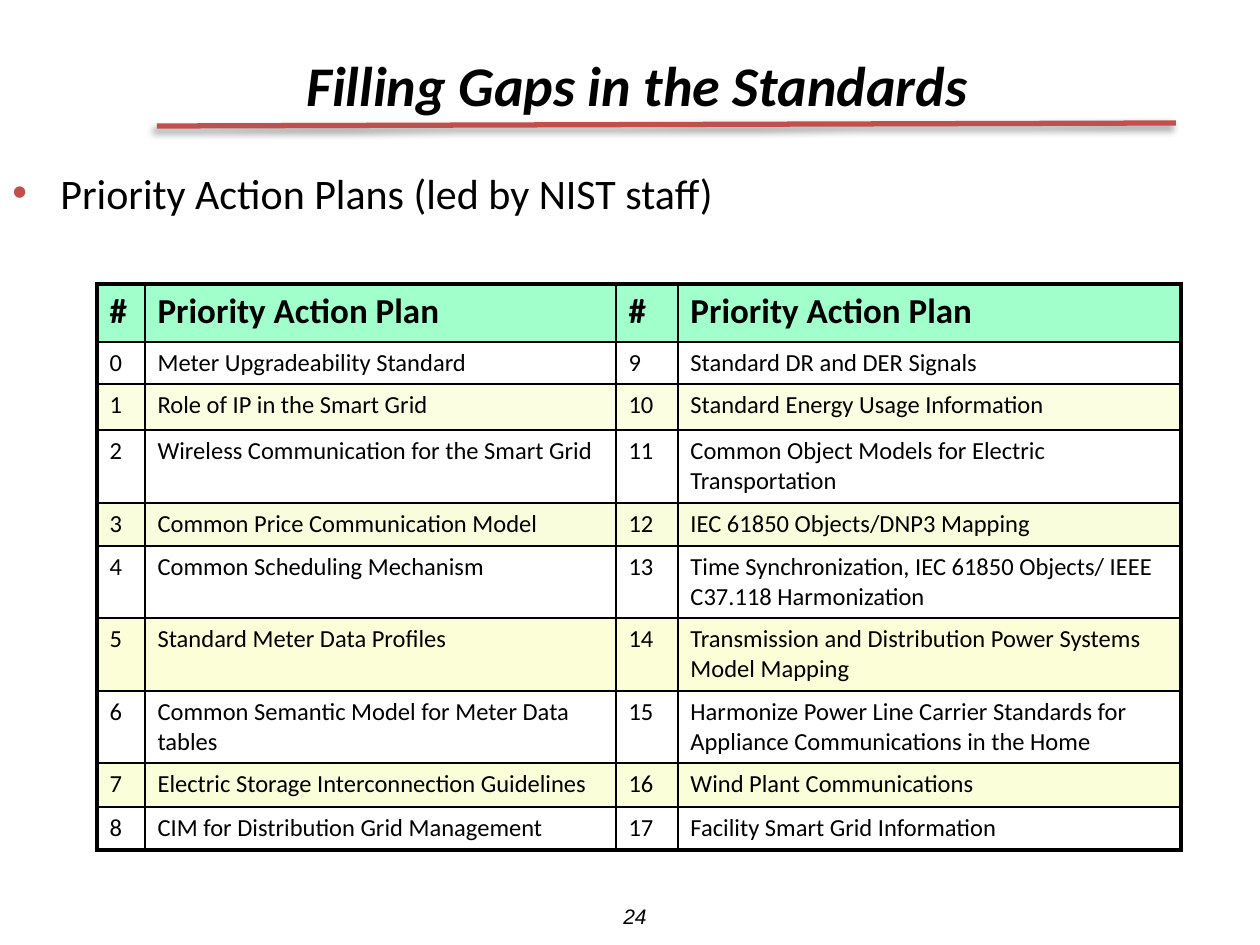
from lxml.etree import SubElement as Sub
from pptx import Presentation
from pptx.dml.color import RGBColor as Rgb
from pptx.enum.shapes import MSO_CONNECTOR as Conn
from pptx.enum.text import MSO_ANCHOR as Anchor, PP_ALIGN as Align
from pptx.oxml.ns import qn
from pptx.util import Pt

SCALE = 914400 / 126
BLACK, RED, MINT = "000000", "C0504D", "43FF98"
THIN, THICK = 1, 2.25

COLS = [48, 471, 62, 503]
HEAD = ["#", "Priority Action Plan"] * 2
HEAD_TALL = 58
# Row height, fill, left plan, right plan
PLANS = [
    (42, None, "Meter Upgradeability Standard", "Standard DR and DER Signals"),
    (46, "FAFEC6", "Role of IP in the Smart Grid", "Standard Energy Usage Information"),
    (73, None, "Wireless Communication for the Smart Grid",
     "Common Object Models for Electric Transportation"),
    (43, "F7FDBB", "Common Price Communication Model", "IEC 61850 Objects/DNP3 Mapping"),
    (72, None, "Common Scheduling Mechanism",
     "Time Synchronization, IEC 61850 Objects/ IEEE C37.118 Harmonization"),
    (73, "F8FEB0", "Standard Meter Data Profiles",
     "Transmission and Distribution Power Systems Model Mapping"),
    (72, None, "Common Semantic Model for Meter Data tables",
     "Harmonize Power Line Carrier Standards for Appliance Communications in the Home"),
    (44, "F7FEB4", "Electric Storage Interconnection Guidelines",
     "Wind Plant Communications"),
    (43, None, "CIM for Distribution Grid Management", "Facility Smart Grid Information"),
]


def px(n):
    return round(n * SCALE)


def color(code):
    return Rgb.from_string(code)


def style(para, size, **more):
    form = {"name": "Calibri", "size": Pt(size), "bold": False, "italic": False, **more}
    for key, val in form.items():
        setattr(para.font, key, val)
    para.font.color.rgb = color(BLACK)


def add_text(slide, box, text, size, align=Align.LEFT, anchor=Anchor.TOP, bullet=None, **more):
    frame = slide.shapes.add_textbox(*map(px, box)).text_frame
    frame.word_wrap = True
    frame.vertical_anchor = anchor
    para = frame.paragraphs[0]
    para.text = text
    para.alignment = align
    if bullet:
        add_bullet(para, bullet, 48)
    style(para, size, **more)


def add_bullet(para, code, indent):
    props = para._p.get_or_add_pPr()
    props.set("marL", str(px(indent)))
    props.set("indent", str(-px(indent)))
    Sub(Sub(props, qn("a:buClr")), qn("a:srgbClr"), val=code)
    Sub(props, qn("a:buFont"), typeface="Arial")
    Sub(props, qn("a:buChar"), char="•")


def add_rule(slide, ends, code, width):
    rule = slide.shapes.add_connector(Conn.STRAIGHT, *map(px, ends))
    rule.line.color.rgb = color(code)
    rule.line.width = Pt(width)
    # Soft shadow to the lower left
    glow = Sub(rule._element.spPr, qn("a:effectLst"))
    cast = Sub(glow, qn("a:outerShdw"), blurRad=str(Pt(4)), dist=str(Pt(3)),
               dir="8100000", algn="tr", rotWithShape="0")
    Sub(Sub(cast, qn("a:srgbClr"), val=BLACK), qn("a:alpha"), val="40000")


def add_edge(cell, side, width):
    edge = Sub(cell._tc.get_or_add_tcPr(), qn("a:ln" + side), w=str(Pt(width)))
    Sub(Sub(edge, qn("a:solidFill")), qn("a:srgbClr"), val=BLACK)


def fill_cell(cell, code):
    if not code:
        cell.fill.background()
        return
    cell.fill.solid()
    cell.fill.fore_color.rgb = color(code)
    tint = cell._tc.tcPr.find(qn("a:solidFill")).find(qn("a:srgbClr"))
    Sub(tint, qn("a:alpha"), val="50000")


def add_grid(slide, left, top):
    count = len(PLANS)
    rows = [(HEAD_TALL, MINT, HEAD)]
    for n, (tall, code, first, second) in enumerate(PLANS):
        rows.append((tall, code, [str(n), first, str(n + count), second]))
    high = sum(row[0] for row in rows)
    box = (left, top, sum(COLS), high)
    grid = slide.shapes.add_table(len(rows), len(COLS), *map(px, box)).table
    grid.first_row = grid.horz_banding = False
    for col, wide in zip(grid.columns, COLS):
        col.width = px(wide)
    for r, (tall, code, texts) in enumerate(rows):
        grid.rows[r].height = px(tall)
        for c, text in enumerate(texts):
            cell = grid.cell(r, c)
            cell.text = text
            style(cell.text_frame.paragraphs[0], 14 if r else 20, bold=r == 0)
            # Thick lines on the outside only
            outer = {"L": c == 0, "R": c == len(COLS) - 1, "T": r == 0, "B": r == count}
            for side, out in outer.items():
                add_edge(cell, side, THICK if out else THIN)
            fill_cell(cell, code)


def main():
    deck = Presentation()
    deck.slide_width, deck.slide_height = px(1260), px(945)
    slide = deck.slides.add_slide(deck.slide_layouts[6])
    # Title and its rule
    add_rule(slide, (157, 126, 1176, 123), RED, 3)
    add_text(slide, (294, 32, 966, 105), "Filling Gaps in the Standards", 32,
             anchor=Anchor.MIDDLE, bold=True, italic=True)
    # Lead line and table
    add_text(slide, (0, 161, 1071, 714), "Priority Action Plans (led by NIST staff)", 24,
             bullet=RED)
    add_grid(slide, 97, 284)
    # Page number
    add_text(slide, (504, 897, 262, 42), "24", 12, align=Align.CENTER,
             name="Arial", italic=True)
    deck.save("out.pptx")


if __name__ == "__main__":
    main()
